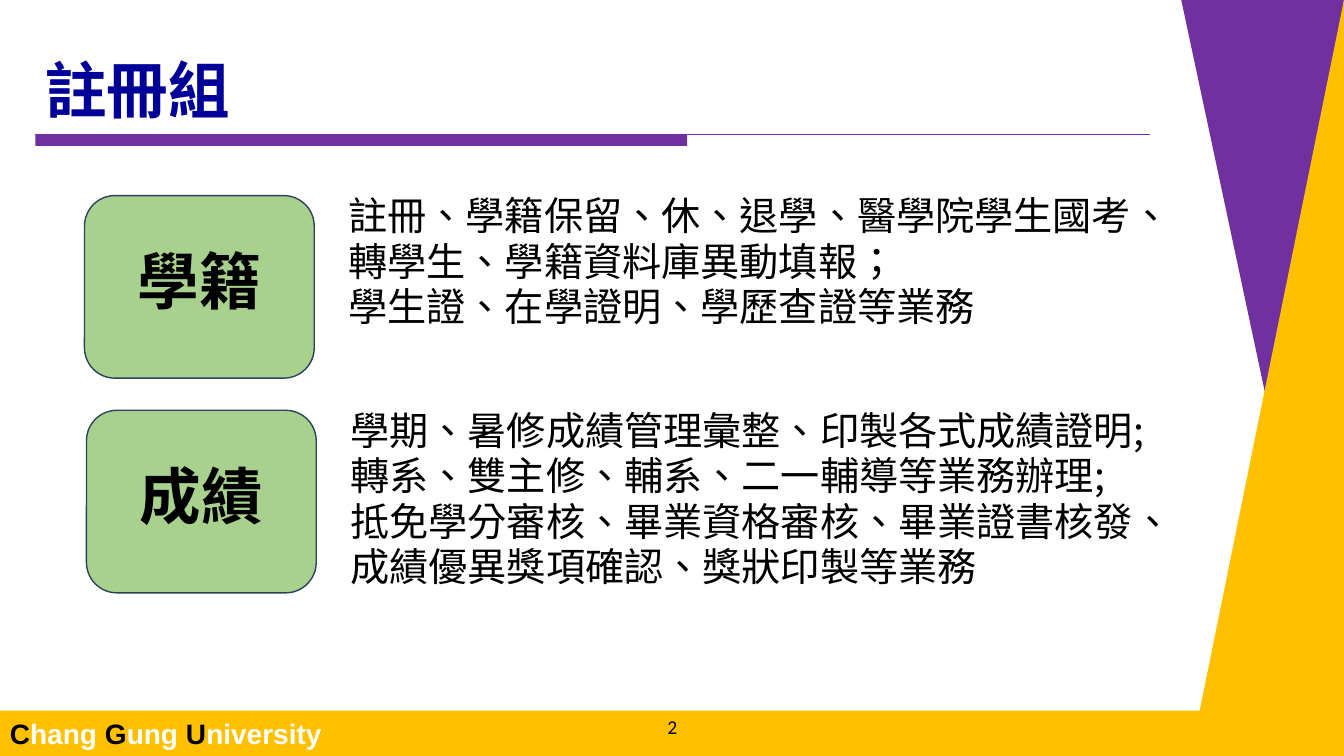
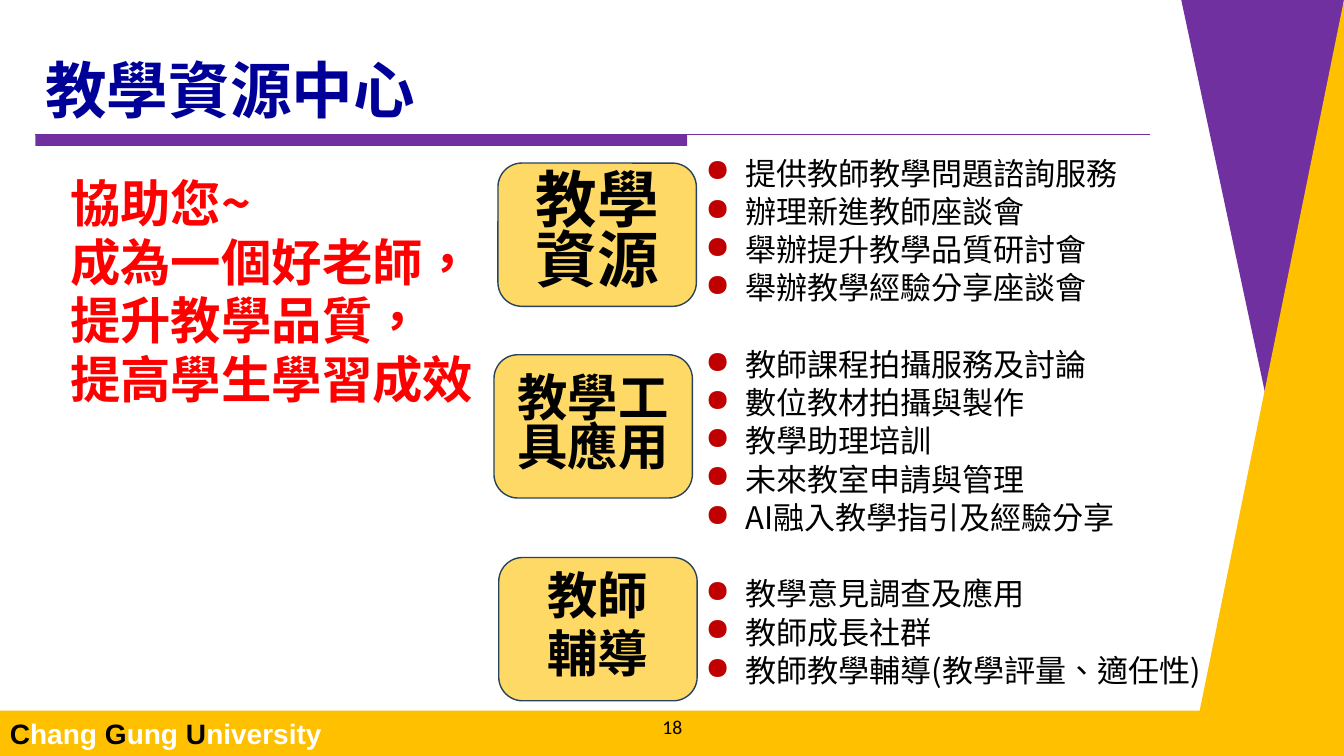
from lxml.etree import SubElement
from pptx import Presentation
from pptx.dml.color import RGBColor
from pptx.enum.shapes import MSO_CONNECTOR, MSO_SHAPE
from pptx.enum.text import MSO_ANCHOR, PP_ALIGN
from pptx.oxml.ns import qn
from pptx.util import Cm, Pt

PURPLE = RGBColor(0x70, 0x30, 0xA0)
GOLD = RGBColor(0xFF, 0xC0, 0x00)
NAVY = RGBColor(0x00, 0x00, 0x99)
GREEN = RGBColor(0xA9, 0xD1, 0x8E)
YELLOW = RGBColor(0xFF, 0xD9, 0x66)
OUTLINE = RGBColor(0x28, 0x44, 0x5D)
RED = RGBColor(0xFF, 0x00, 0x00)
BLACK = RGBColor(0x00, 0x00, 0x00)
WHITE = RGBColor(0xFF, 0xFF, 0xFF)
BULLET_COLOR = "C00000"
CJK = "Noto Sans CJK SC"

WIDTH, HEIGHT = 33.87, 19.05
FOOTER_TOP = 17.91
RULE_LEFT, RULE_TOP, RULE_RIGHT = 0.89, 3.38, 28.98

FOOTER = [("C", BLACK), ("hang ", WHITE), ("G", BLACK),
          ("ung ", WHITE), ("U", BLACK), ("niversity", WHITE)]
WEDGES = [
    (PURPLE, [(WIDTH, 0), (29.77, 0), (32.18, 11.3)]),
    (GOLD, [(WIDTH, 0), (30.23, 17.93), (WIDTH, 17.93)]),
]

REGISTRY = {
    "title": "註冊組",
    "number": "2",
    "duties": [
        (2.13, 4.93, "學籍", [
            "註冊、學籍保留、休、退學、醫學院學生國考、",
            "轉學生、學籍資料庫異動填報；",
            "學生證、在學證明、學歷查證等業務"]),
        (2.18, 10.34, "成績", [
            "學期、暑修成績管理彙整、印製各式成績證明;",
            "轉系、雙主修、輔系、二一輔導等業務辦理;",
            "抵免學分審核、畢業資格審核、畢業證書核發、",
            "成績優異獎項確認、獎狀印製等業務"]),
    ],
}
CENTER = {
    "title": "教學資源中心",
    "number": "18",
    "slogan": ["協助您~", "成為一個好老師，", "提升教學品質，", "提高學生學習成效"],
    "services": [
        (12.55, 4.11, 44, ["教學資源"], [
            "提供教師教學問題諮詢服務", "辦理新進教師座談會",
            "舉辦提升教學品質研討會", "舉辦教學經驗分享座談會"]),
        (12.45, 8.94, 36, ["教學工具應用"], [
            "教師課程拍攝服務及討論", "數位教材拍攝與製作", "教學助理培訓",
            "未來教室申請與管理", "AI融入教學指引及經驗分享"]),
        (12.57, 14.05, 36, ["教師", "輔導"], [
            "教學意見調查及應用", "教師成長社群",
            "教師教學輔導(教學評量、適任性)"]),
    ],
}

DENSE = {"line_spacing": 0.8}
DENSE_CENTERED = {"line_spacing": 0.8, "alignment": PP_ALIGN.CENTER}


def apply(target, values):
    for name, value in values.items():
        setattr(target, name, value)


def add_span(para, text, size, color, bold=False, font=CJK):
    span = para.add_run()
    span.text = text
    apply(span.font, {"name": font, "size": Pt(size), "bold": bold})
    span.font.color.rgb = color
    properties = span.font._element
    properties.set("lang", "zh-TW")
    SubElement(properties, qn("a:ea")).set("typeface", CJK)


def next_para(frame, index):
    return frame.add_paragraph() if index else frame.paragraphs[0]


def write_lines(frame, lines, size, color, layout, **font):
    for index, line in enumerate(lines):
        para = next_para(frame, index)
        apply(para, layout)
        if index:
            para.space_before = Pt(size * 0.2)
        add_span(para, line, size, color, **font)


def add_text(page, left, top, width, height, anchor=MSO_ANCHOR.TOP):
    box = page.shapes.add_textbox(Cm(left), Cm(top), Cm(width), Cm(height))
    apply(box.text_frame, {"word_wrap": True, "vertical_anchor": anchor})
    return box.text_frame


def paint(shape, fill, line=None):
    shape.shadow.inherit = False
    shape.fill.solid()
    shape.fill.fore_color.rgb = fill
    if line is None:
        shape.line.fill.background()
    else:
        shape.line.color.rgb = line
        shape.line.width = Pt(1)


def add_block(page, kind, left, top, width, height, fill, line=None):
    shape = page.shapes.add_shape(kind, Cm(left), Cm(top), Cm(width), Cm(height))
    paint(shape, fill, line)
    apply(shape.text_frame, {"word_wrap": True, "vertical_anchor": MSO_ANCHOR.MIDDLE})
    return shape.text_frame


def add_label(page, left, top, width, height, fill, lines, size):
    frame = add_block(page, MSO_SHAPE.ROUNDED_RECTANGLE, left, top, width, height, fill, OUTLINE)
    write_lines(frame, lines, size, BLACK, DENSE_CENTERED, bold=True, font="Calibri")


def add_page(deck, content):
    page = deck.slides.add_slide(deck.slide_layouts[5])
    for color, points in WEDGES:
        corners = [(Cm(x), Cm(y)) for x, y in points]
        builder = page.shapes.build_freeform(*corners[0])
        builder.add_line_segments(corners[1:], close=True)
        paint(builder.convert_to_shape(), color)

    footer = add_block(page, MSO_SHAPE.RECTANGLE, 0, FOOTER_TOP, WIDTH, HEIGHT - FOOTER_TOP, GOLD)
    footer.paragraphs[0].alignment = PP_ALIGN.LEFT
    for text, color in FOOTER:
        add_span(footer.paragraphs[0], text, 20, color, bold=True, font="Arial")

    add_block(page, MSO_SHAPE.RECTANGLE, RULE_LEFT, RULE_TOP, 16.43, 0.3, PURPLE)
    rule = page.shapes.add_connector(
        MSO_CONNECTOR.STRAIGHT, Cm(RULE_LEFT), Cm(RULE_TOP), Cm(RULE_RIGHT), Cm(RULE_TOP))
    rule.line.color.rgb = PURPLE
    rule.line.width = Pt(0.75)
    SubElement(rule._element.spPr, qn("a:effectLst"))

    title = page.shapes.title
    apply(title, {"left": Cm(RULE_LEFT), "top": Cm(1.02),
                  "width": Cm(RULE_RIGHT - RULE_LEFT), "height": Cm(2.31)})
    apply(title.text_frame, {"vertical_anchor": MSO_ANCHOR.BOTTOM, "word_wrap": True})
    write_lines(title.text_frame, [content["title"]], 44, NAVY,
                {"line_spacing": 0.9, "alignment": PP_ALIGN.LEFT}, bold=True)

    number = add_text(page, 13.44, 17.96, 7.01, 0.71, MSO_ANCHOR.MIDDLE)
    write_lines(number, [content["number"]], 14, BLACK,
                {"alignment": PP_ALIGN.CENTER}, font="Calibri")
    return page


def add_bullet(para):
    properties = para._p.get_or_add_pPr()
    properties.set("marL", str(Cm(1)))
    properties.set("indent", str(-Cm(1)))
    color = SubElement(properties, qn("a:buClr"))
    SubElement(color, qn("a:srgbClr")).set("val", BULLET_COLOR)
    SubElement(properties, qn("a:buChar")).set("char", "●")


def build_registry(deck):
    page = add_page(deck, REGISTRY)
    for left, top, label, lines in REGISTRY["duties"]:
        add_label(page, left, top, 5.79, 4.6, GREEN, [label], 44)
        frame = add_text(page, left + 6.4, top, 21.01, 1.2 * len(lines))
        write_lines(frame, lines, 28, BLACK, DENSE)


def build_center(deck):
    page = add_page(deck, CENTER)
    write_lines(add_text(page, 1.52, 4.52, 11.51, 6.1), CENTER["slogan"], 36, RED, DENSE, bold=True)
    services = add_text(page, 17.53, 3.94, 14.05, 14.17)
    count = 0
    for left, top, size, label, items in CENTER["services"]:
        add_label(page, left, top, 5, 3.61, YELLOW, label, size)
        for position, item in enumerate(items):
            para = next_para(services, count)
            add_bullet(para)
            apply(para, {"line_spacing": 0.8, "space_after": Pt(6)})
            if count and position == 0:
                para.space_before = Pt(27.3)
            add_span(para, item, 22.2, BLACK)
            count += 1


def main():
    deck = Presentation()
    deck.slide_width, deck.slide_height = Cm(WIDTH), Cm(HEIGHT)
    build_registry(deck)
    build_center(deck)
    deck.save("out.pptx")


if __name__ == "__main__":
    main()
